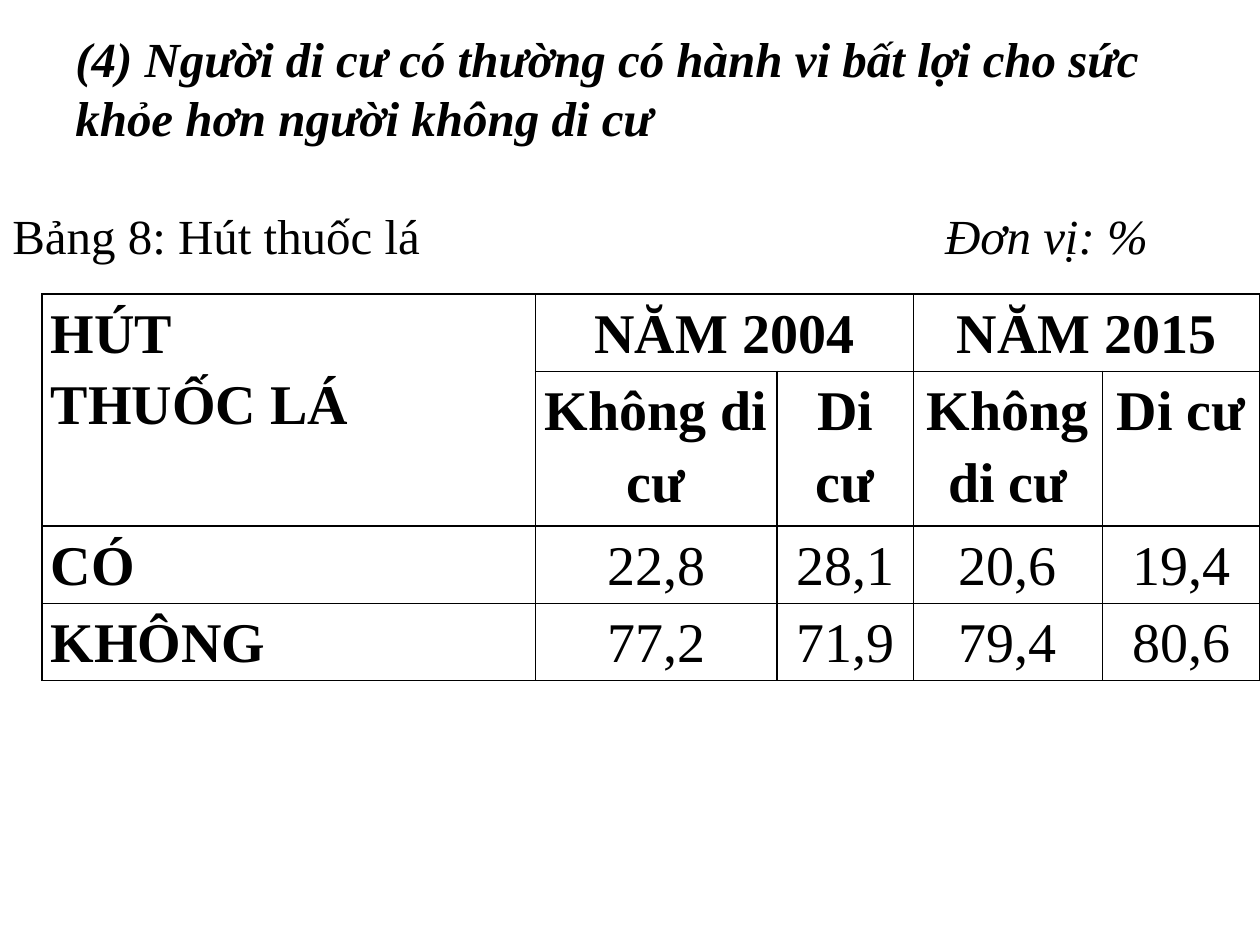
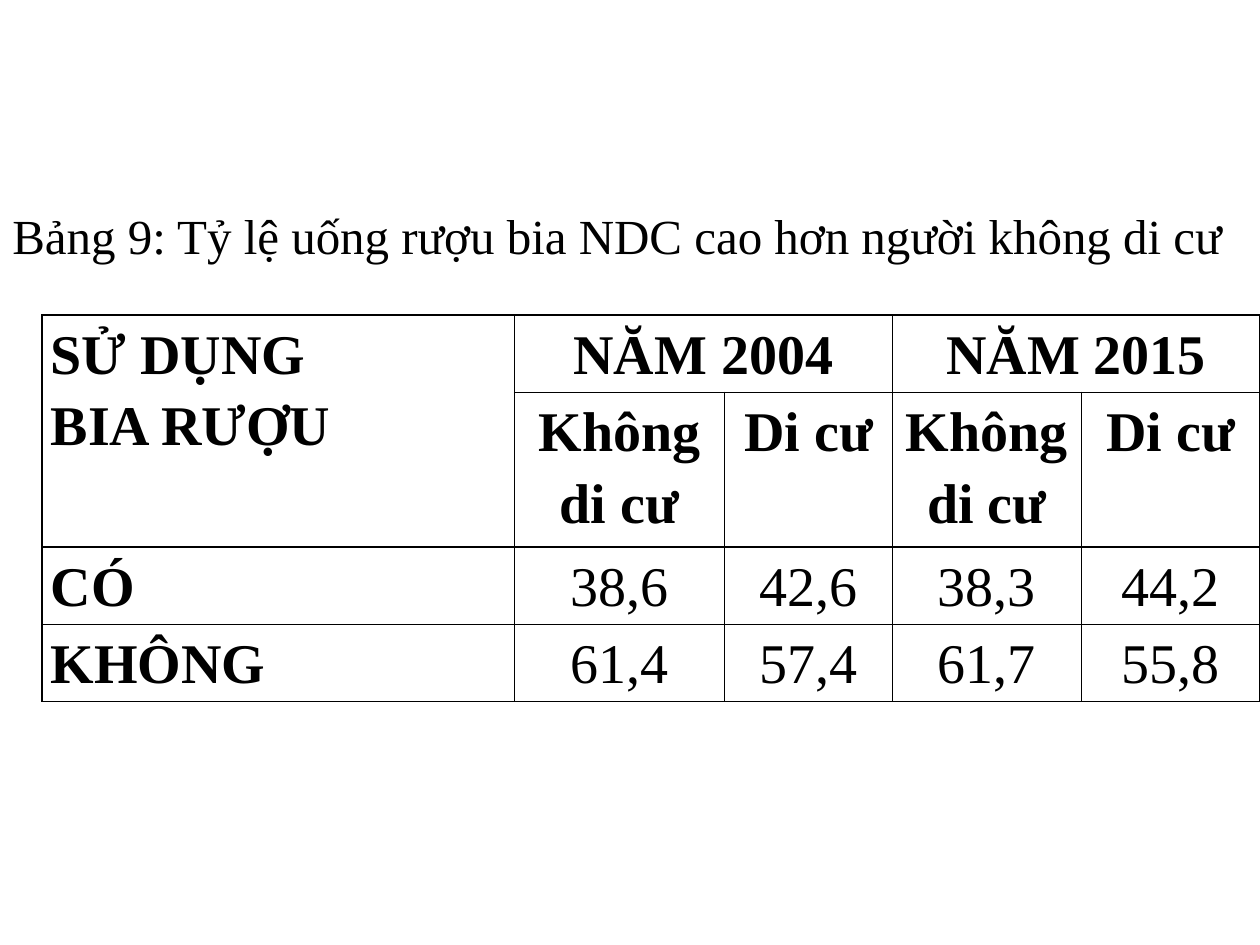
from lxml import etree
from pptx import Presentation
from pptx import util as u
from pptx.dml.color import RGBColor
from pptx.enum import text
from pptx.oxml.ns import qn

FONT = "Times New Roman"
INK = "000000"
TITLE_SIZE, TABLE_SIZE = 28, 32
SLIDE_W, SLIDE_H = 720, 540
TABLE_LEFT = 24
ROW_H = 44.2
CENTER, JUSTIFY = text.PP_ALIGN.CENTER, text.PP_ALIGN.JUSTIFY
GROUPS = ["NĂM 2004", "NĂM 2015"]
STATUSES = ["Không di cư", "Di cư"]
ANSWERS = ["CÓ", "KHÔNG"]


def color(value):
    return RGBColor.from_string(value)


def add_run(p, content, size=TITLE_SIZE, bold=False, italic=False):
    r = p.add_run()
    r.text = content
    f = r.font
    f.name, f.size, f.bold, f.italic = FONT, u.Pt(size), bold, italic
    f.color.rgb = color(INK)


def add_tab_stop(p, pos):
    tabs = etree.SubElement(p._p.get_or_add_pPr(), qn("a:tabLst"))
    etree.SubElement(tabs, qn("a:tab"), pos=str(u.Pt(pos)), algn="l")


def set_borders(cell, width=1):
    tc_pr = cell._tc.get_or_add_tcPr()
    for i, side in enumerate(("lnL", "lnR", "lnT", "lnB")):
        ln = etree.Element(qn(f"a:{side}"), w=str(u.Pt(width)))
        fill = etree.SubElement(ln, qn("a:solidFill"))
        etree.SubElement(fill, qn("a:srgbClr"), val=INK)
        tc_pr.insert(i, ln)


class Deck:
    """Holds the presentation and the slide being filled."""

    def __init__(self):
        self.prs = Presentation()
        self.prs.slide_width, self.prs.slide_height = u.Pt(SLIDE_W), u.Pt(SLIDE_H)

    def slide(self):
        self.s = self.prs.slides.add_slide(self.prs.slide_layouts[6])
        bg = self.s.background.fill
        bg.solid()
        bg.fore_color.rgb = color("FFFFFF")

    def text_box(self, top, height, anchor=text.MSO_ANCHOR.TOP):
        """Add a full-width box and return its text frame."""
        sp = self.s.shapes.add_textbox(0, u.Pt(top), u.Pt(SLIDE_W), u.Pt(height))
        tf = sp.text_frame
        tf.word_wrap = True
        tf.auto_size = text.MSO_AUTO_SIZE.SHAPE_TO_FIT_TEXT
        tf.vertical_anchor = anchor
        return tf

    def cell(self, row, col, content, bold=True, align=None):
        tf = self.tbl.cell(row, col).text_frame
        for i, line in enumerate(content.split("\n")):
            p = tf.add_paragraph() if i else tf.paragraphs[0]
            p.alignment, p.line_spacing = align, 1.15
            add_run(p, line, TABLE_SIZE, bold)

    def rate_table(self, top, widths, heading, rates):
        """Add a table of rates by year and migration status."""
        heights = [ROW_H, 2 * ROW_H, ROW_H, ROW_H]
        self.tbl = self.s.shapes.add_table(
            len(heights), len(widths), u.Pt(TABLE_LEFT), u.Pt(top),
            u.Pt(sum(widths)), u.Pt(sum(heights))).table
        self.tbl.first_row = self.tbl.horz_banding = False
        for column, width in zip(self.tbl.columns, widths):
            column.width = u.Pt(width)
        for row, height in zip(self.tbl.rows, heights):
            row.height = u.Pt(height)
        for cell in self.tbl.iter_cells():
            cell.margin_left = cell.margin_right = u.Pt(5)
            cell.margin_top = cell.margin_bottom = 0
            cell.fill.background()
            set_borders(cell)

        self.tbl.cell(0, 0).merge(self.tbl.cell(1, 0))
        self.cell(0, 0, heading)
        for g, group in enumerate(GROUPS):
            first = 1 + g * len(STATUSES)
            self.tbl.cell(0, first).merge(self.tbl.cell(0, first + 1))
            self.cell(0, first, group, align=CENTER)
            for i, status in enumerate(STATUSES):
                self.cell(1, first + i, status, align=CENTER)
        for row, (answer, values) in enumerate(zip(ANSWERS, rates), 2):
            self.cell(row, 0, answer, align=JUSTIFY)
            for col, value in enumerate(values, 1):
                self.cell(row, col, value, bold=False, align=CENTER)


def smoking_slide(deck):
    deck.slide()
    deck.rate_table(168, [282, 138, 78, 108, 90], "HÚT\nTHUỐC LÁ",
                    [["22,8", "28,1", "20,6", "19,4"],
                     ["77,2", "71,9", "79,4", "80,6"]])
    tf = deck.text_box(12, 143.3, text.MSO_ANCHOR.MIDDLE)
    title = tf.paragraphs[0]
    title.level = 1
    pr = title._p.get_or_add_pPr()
    pr.set("marL", str(u.Pt(36)))
    pr.set("indent", "0")
    add_run(title, "(4) Người di cư có thường có hành vi bất lợi cho sức khỏe "
                   "hơn người không di cư", bold=True, italic=True)
    caption = tf.add_paragraph()
    caption.space_before = u.Pt(33.5)
    add_tab_stop(caption, 533)
    add_run(caption, "Bảng 8: Hút thuốc lá\t")
    add_run(caption, "Đơn vị: %", italic=True)


def drinking_slide(deck):
    deck.slide()
    deck.rate_table(180, [270, 120, 96, 108, 102], "SỬ DỤNG\nBIA RƯỢU",
                    [["38,6", "42,6", "38,3", "44,2"],
                     ["61,4", "57,4", "61,7", "55,8"]])
    caption = deck.text_box(114, 41).paragraphs[0]
    add_run(caption, "Bảng 9: Tỷ lệ uống rượu bia NDC cao hơn người không di cư")


def main():
    deck = Deck()
    smoking_slide(deck)
    drinking_slide(deck)
    deck.prs.save("out.pptx")


if __name__ == "__main__":
    main()
